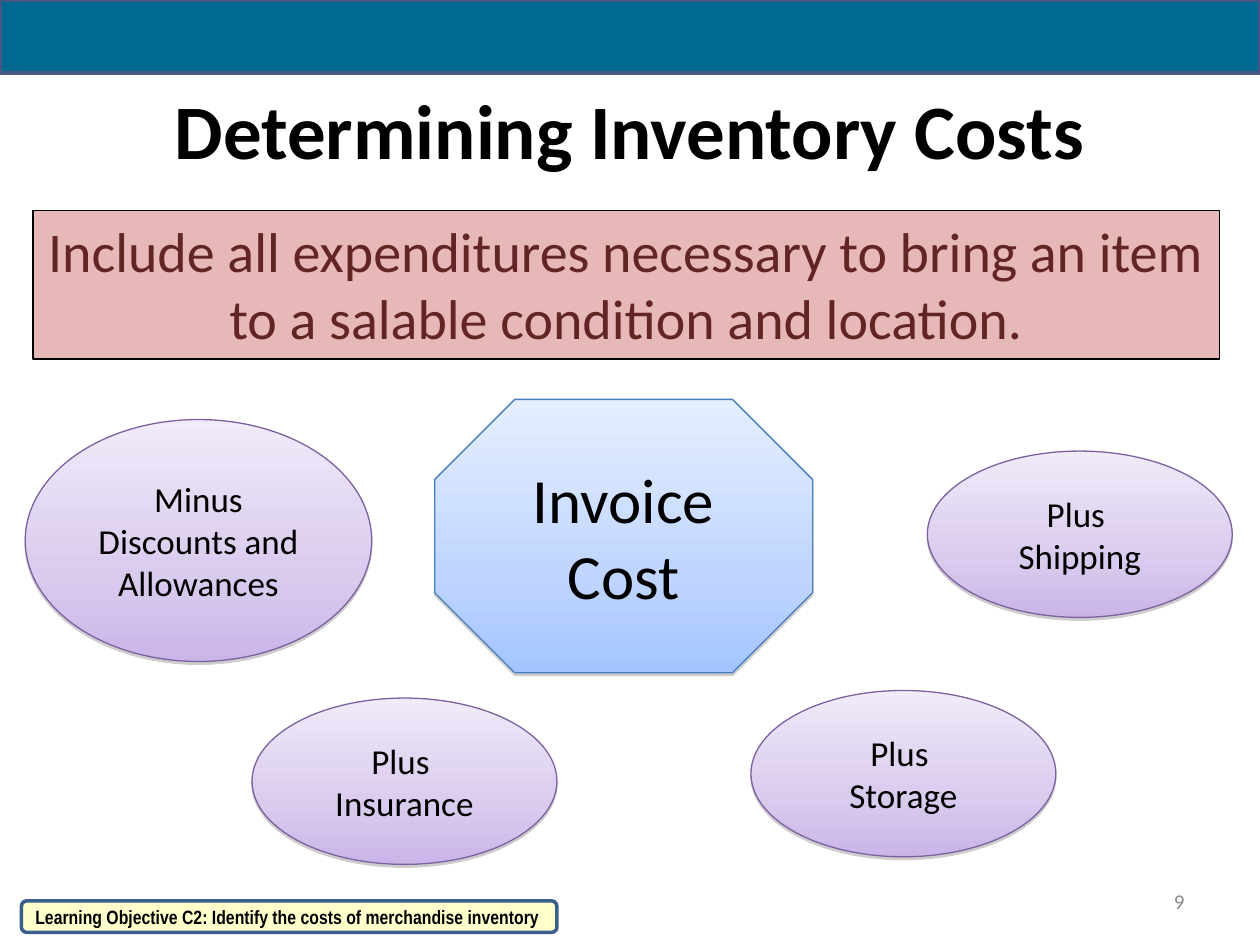
from copy import deepcopy
from dataclasses import dataclass

from pptx import Presentation
from pptx.dml.color import RGBColor
from pptx.enum.shapes import MSO_SHAPE
from pptx.enum.text import MSO_ANCHOR, PP_ALIGN
from pptx.oxml import parse_xml
from pptx.oxml.ns import nsdecls, qn
from pptx.util import Inches, Pt

RECT, ROUNDED = MSO_SHAPE.RECTANGLE, MSO_SHAPE.ROUNDED_RECTANGLE
OVAL, OCTAGON = MSO_SHAPE.OVAL, MSO_SHAPE.OCTAGON
TOP, MIDDLE = MSO_ANCHOR.TOP, MSO_ANCHOR.MIDDLE
LEFT, CENTER, RIGHT = PP_ALIGN.LEFT, PP_ALIGN.CENTER, PP_ALIGN.RIGHT
TITLE_ONLY = 5


@dataclass(frozen=True)
class Theme:
    body_font: str = "Calibri"
    tag_font: str = "Arial Narrow"
    ink: str = "000000"
    muted: str = "898989"
    bar: tuple = ("006991", "475785", 2.25)
    rule: tuple = ("E6B9B8", "000000", 1)
    rule_text: str = "632523"
    tag: tuple = ("FFFFCC", "3A5F8C", 2)
    # Gradient colours from top to bottom, then line colour and width
    core: tuple = (("E5EEFF", "BFD5FF", "A3C4FF"), "4A7EBB", 0.75)
    adjustment: tuple = (("F0EAF9", "D9CBEE", "C9B5E8"), "7D60A0", 0.75)
    gradient_positions: tuple = (0, 0.65, 1)
    title_size: int = 44
    core_size: int = 36
    rule_size: int = 32
    adjustment_size: int = 20
    number_size: int = 12
    tag_size: int = 11


THEME = Theme()


def write(shape, text, size, color=THEME.ink, font=THEME.body_font,
          bold=False, align=CENTER, anchor=MIDDLE):
    frame = shape.text_frame
    frame.text = text
    frame.word_wrap = True
    frame.vertical_anchor = anchor
    paragraph = frame.paragraphs[0]
    paragraph.alignment = align
    formats = {"name": font, "size": Pt(size), "bold": bold}
    for run in paragraph.runs:
        for attribute, value in formats.items():
            setattr(run.font, attribute, value)
        run.font.color.rgb = RGBColor.from_string(color)


def add_panel(slide, kind, box, style):
    """Add a shape with a flat fill, or a shaded one if given several colours."""
    fill, line, width = style
    panel = slide.shapes.add_shape(kind, *map(Inches, box))
    panel.shadow.inherit = False
    panel.line.color.rgb = RGBColor.from_string(line)
    panel.line.width = Pt(width)
    if isinstance(fill, str):
        panel.fill.solid()
        panel.fill.fore_color.rgb = RGBColor.from_string(fill)
    else:
        shade(panel, fill)
    return panel


def shade(panel, colors):
    panel.fill.gradient()
    panel.fill.gradient_angle = 270
    properties = panel._element.spPr
    stop_list = properties.find(qn("a:gradFill")).find(qn("a:gsLst"))
    stop_list.append(deepcopy(stop_list[-1]))
    for stop, position, color in zip(panel.fill.gradient_stops,
                                     THEME.gradient_positions, colors):
        stop.position = position
        stop.color.rgb = RGBColor.from_string(color)
    properties.find(qn("a:effectLst")).append(parse_xml(
        f'<a:outerShdw {nsdecls("a")} blurRad="0" dist="{Pt(1.6)}" '
        'dir="5400000" rotWithShape="0"><a:srgbClr val="808080">'
        '<a:alpha val="38000"/></a:srgbClr></a:outerShdw>'))


def add_heading(slide, box):
    title = slide.shapes.title
    title.left, title.top, title.width, title.height = map(Inches, box)
    write(title, "Determining Inventory Costs", THEME.title_size, bold=True)


def add_cost_rule(slide, box):
    rule = add_panel(slide, RECT, box, THEME.rule)
    write(rule, "Include all expenditures necessary to bring an item "
          "to a salable condition and location.",
          THEME.rule_size, THEME.rule_text, anchor=TOP)


def add_cost_diagram(slide, box):
    """Place the invoice cost and the adjustments around it."""
    left, top = box[:2]
    core = add_panel(slide, OCTAGON, (left + 3.25, top, 3, 2.17), THEME.core)
    core.adjustments[0] = 0.293
    write(core, "Invoice Cost", THEME.core_size)

    small = (2.42, 1.32)
    adjustments = [
        ("Minus Discounts and Allowances", 0, 0.16, (2.75, 1.92)),
        ("Plus \vInsurance", 1.8, 2.37, small),
        ("Plus \vStorage", 5.76, 2.31, small),
        ("Plus \vShipping", 7.16, 0.41, small),
    ]
    for label, x, y, size in adjustments:
        adjustment = add_panel(slide, OVAL, (left + x, top + y, *size),
                               THEME.adjustment)
        write(adjustment, label, THEME.adjustment_size)


def add_footer(slide, box):
    left, top, width, height = box
    # Page number
    number = slide.shapes.add_textbox(
        *map(Inches, (left + width - 2.33, top, 2.33, 0.4)))
    write(number, "9", THEME.number_size, THEME.muted, align=RIGHT)
    # Learning objective
    objective = add_panel(slide, ROUNDED,
                          (left, top + height - 0.25, 4.25, 0.25), THEME.tag)
    write(objective,
          "Learning Objective C2: Identify the costs of merchandise inventory",
          THEME.tag_size, font=THEME.tag_font, bold=True, align=LEFT)


def main():
    deck = Presentation()
    deck.slide_width, deck.slide_height = Inches(10), Inches(7.5)
    slide = deck.slides.add_slide(deck.slide_layouts[TITLE_ONLY])
    add_heading(slide, (0.5, 0.5, 9, 1.05))
    add_cost_rule(slide, (0.26, 1.67, 9.42, 1.18))
    add_cost_diagram(slide, (0.2, 3.17, 9.58, 3.69))
    add_panel(slide, RECT, (0, 0, 10, 0.58), THEME.bar)
    add_footer(slide, (0.17, 6.95, 9.33, 0.45))
    deck.save("out.pptx")


if __name__ == "__main__":
    main()
